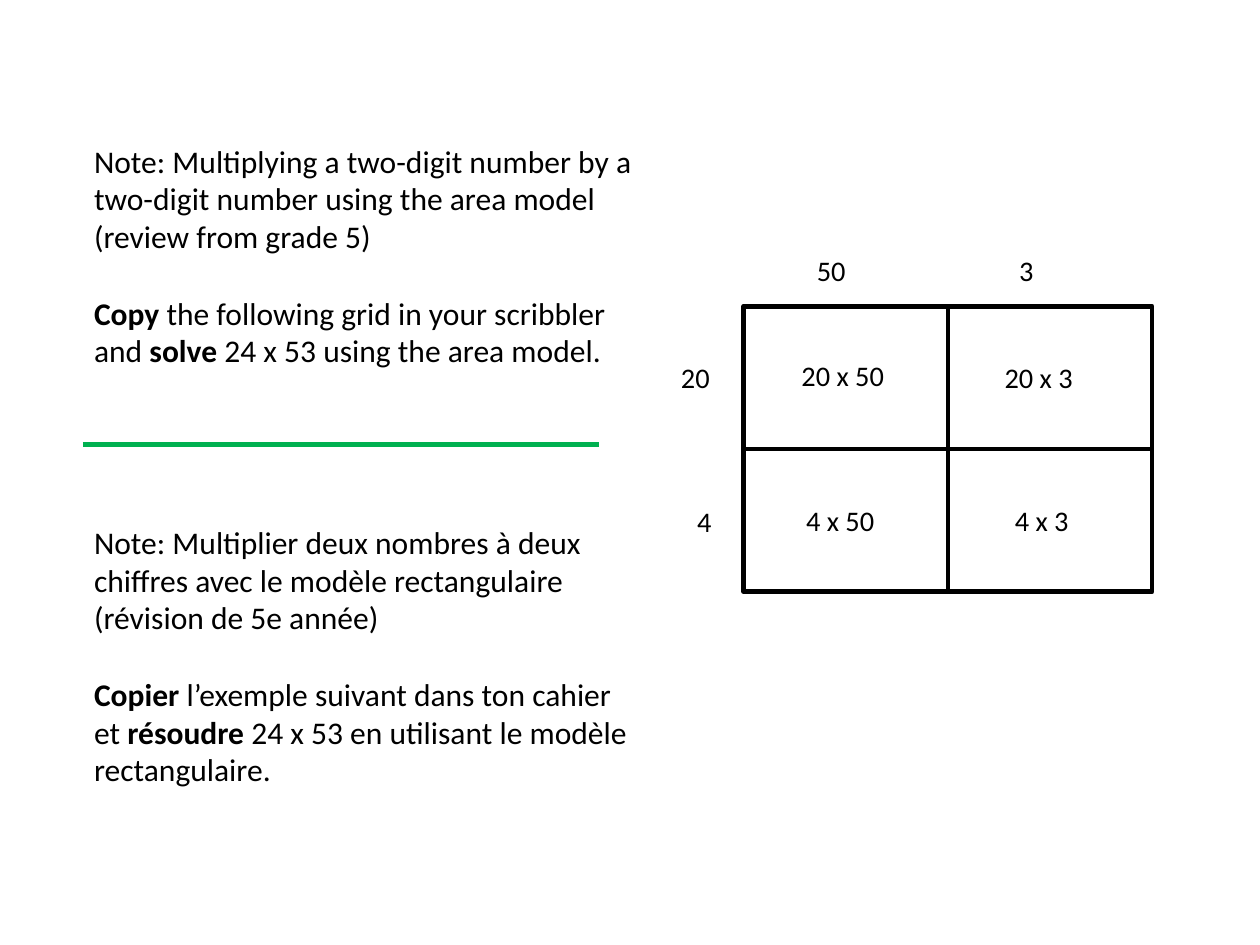
import pptx
import pptx.util
import pptx.dml.color
import pptx.enum.shapes
import pptx.enum.text
import pptx.oxml.ns
from lxml import etree
from pptx.util import Pt

COLORS = {"ink": "000000", "divider": "00B050"}
LINE_HEIGHT = 24.4

NOTES = [
    (0, "Note: Multiplying a two-digit number by a"),
    (0, "two-digit number using the area model"),
    (0, "(review from grade 5)"),
    (1, "*Copy* the following grid in your scribbler"),
    (0, "and *solve* 24 x 53 using the area model."),
    (4, "Note: Multiplier deux nombres à deux"),
    (0, "chiffres avec le modèle rectangulaire"),
    (0, "(révision de 5e année)"),
    (1, "*Copier* l’exemple suivant dans ton cahier"),
    (0, "et *résoudre* 24 x 53 en utilisant le modèle"),
    (0, "rectangulaire."),
]

GRID_LABELS = [
    ("50", 511.5, 157, 50),
    ("3", 640, 157, 40),
    ("20", 425.3, 225.4, 39),
    ("4", 435.6, 316.8, 37.4),
    ("20 x 50", 501.8, 224, 130),
    ("20 x 3", 630.7, 225.4, 101.5),
    ("4 x 50", 504.7, 316, 108),
    ("4 x 3", 637.2, 316, 104.4),
]


def rgb(name):
    """Return the named palette colour."""
    return pptx.dml.color.RGBColor.from_string(COLORS[name])


def add_text(slide, lines, left, top, width, height, size=18, font="Calibri", color="ink"):
    """Write (blank lines above, text) pairs, with bold between asterisks."""
    frame = slide.shapes.add_textbox(Pt(left), Pt(top), Pt(width), Pt(height)).text_frame
    frame.word_wrap = True
    frame.auto_size = pptx.enum.text.MSO_AUTO_SIZE.SHAPE_TO_FIT_TEXT
    for index, (gap, text) in enumerate(lines):
        paragraph = frame.add_paragraph() if index else frame.paragraphs[0]
        paragraph.space_before = Pt(gap * LINE_HEIGHT)
        for part, words in enumerate(text.split("*")):
            if words:
                run = paragraph.add_run()
                run.text = words
                run.font.name = font
                run.font.size = Pt(size)
                run.font.bold = part % 2 == 1
                run.font.color.rgb = rgb(color)


def add_rule(slide, x1, y1, x2, y2, color="ink"):
    """Draw a straight 3-point line without shadow."""
    rule = slide.shapes.add_connector(
        pptx.enum.shapes.MSO_CONNECTOR.STRAIGHT, Pt(x1), Pt(y1), Pt(x2), Pt(y2))
    rule.line.color.rgb = rgb(color)
    rule.line.width = Pt(3)
    etree.SubElement(rule._element.spPr, pptx.oxml.ns.qn("a:effectLst"))


def add_area_grid(slide, left, top, width, height):
    """Draw a frame split into two rows and two columns."""
    frame = slide.shapes.add_shape(
        pptx.enum.shapes.MSO_SHAPE.RECTANGLE, Pt(left), Pt(top), Pt(width), Pt(height))
    frame.shadow.inherit = False
    frame.fill.background()
    frame.line.color.rgb = rgb("ink")
    frame.line.width = Pt(3)
    middle_x, middle_y = left + width / 2, top + height / 2
    add_rule(slide, left, middle_y, left + width, middle_y)
    add_rule(slide, middle_x, top, middle_x, top + height)


def main():
    """Build the bilingual area model slide."""
    deck = pptx.Presentation()
    deck.slide_width, deck.slide_height = Pt(800), Pt(600)
    slide = deck.slides.add_slide(deck.slide_layouts[6])
    add_text(slide, NOTES, 52.6, 86.4, 366.5, 484.6, size=20)
    add_rule(slide, 52.6, 282.2, 380.2, 282.2, color="divider")
    add_area_grid(slide, 472.3, 194.4, 259.2, 181.4)
    for label, left, top, width in GRID_LABELS:
        add_text(slide, [(0, label)], left, top, width, 29)
    deck.save("out.pptx")


if __name__ == "__main__":
    main()
